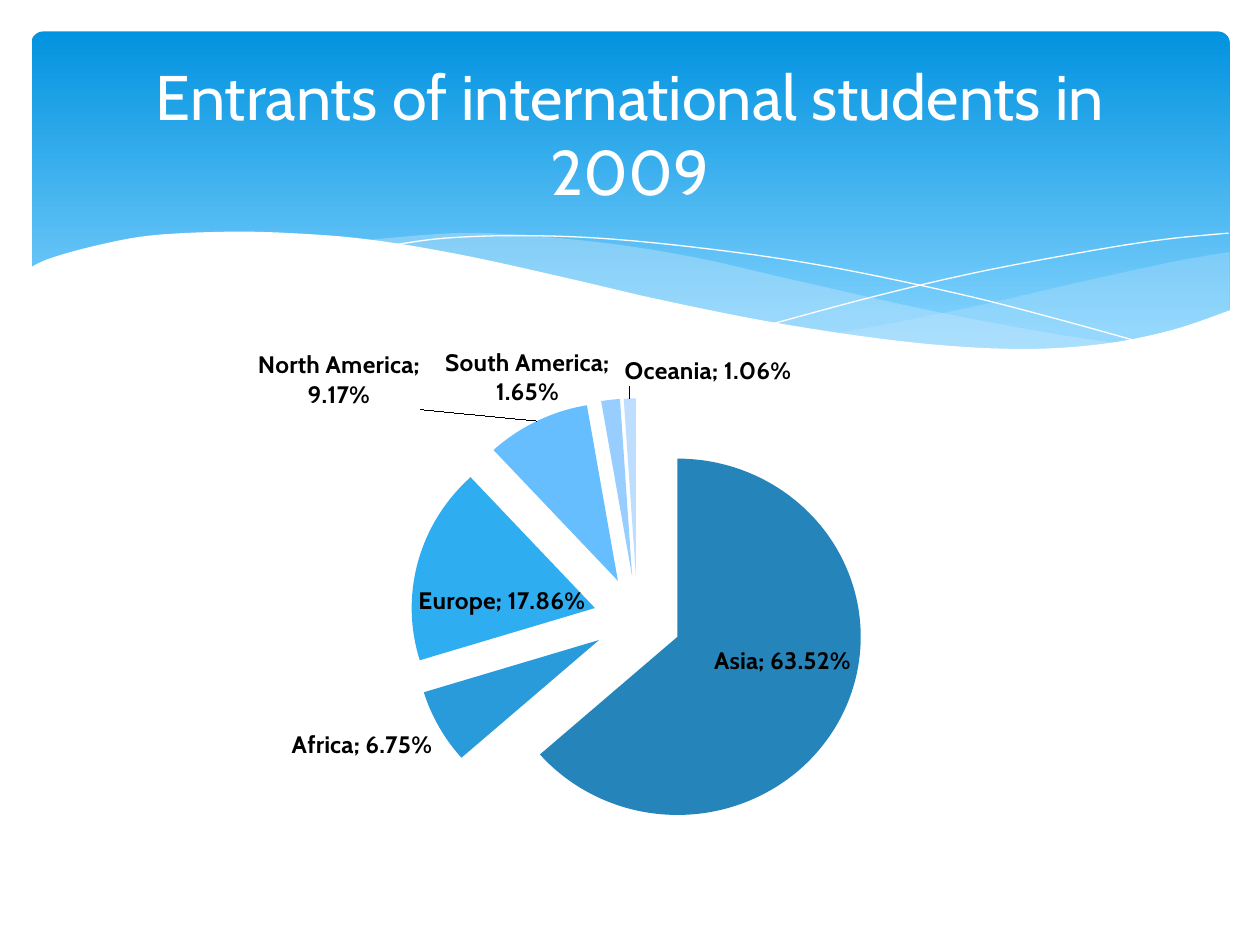
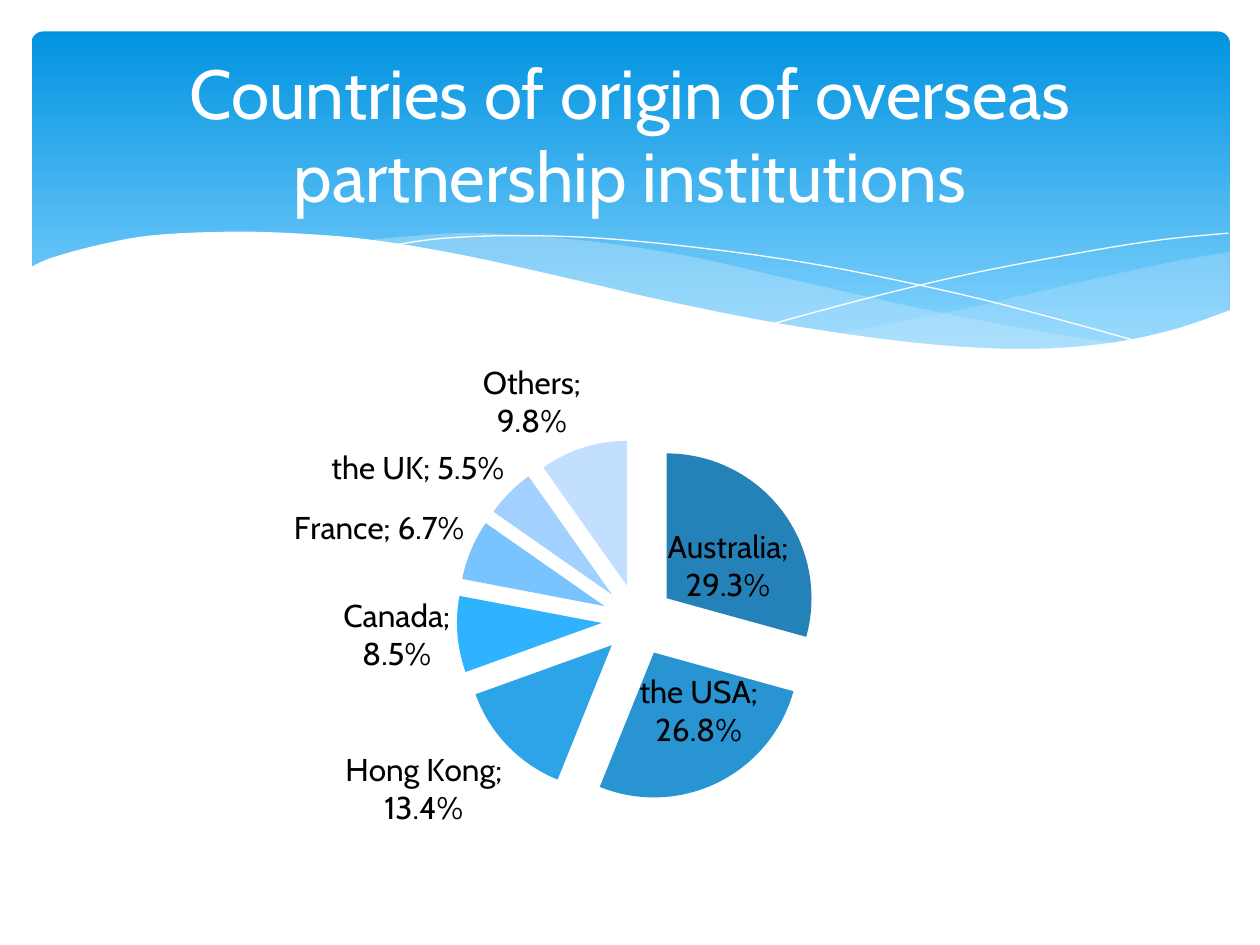
from copy import deepcopy

from pptx import Presentation
from pptx import util as u
from pptx.chart.data import CategoryChartData
from pptx.dml.color import RGBColor
from pptx.enum import chart as ch
from pptx.enum import shapes, text
from pptx.oxml import parse_xml
from pptx.oxml.ns import nsdecls, qn

FONT = "Cabin"
COLORS = {
    "band_top": "0293E0",
    "band_bottom": "83D3FE",
    "mist": "C6E7FC",
    "white": "FFFFFF",
    "black": "000000",
}
REGION_BLUES = ["2585BB", "299ADA", "2EADF1", "66BEFF", "98CEFF", "BDDEFF"]
COUNTRY_BLUES = ["2482B8", "2895D2", "2DA4E8", "30B3FF", "79C3FF", "A2D1FF", "C2DFFF"]

COLS, ROWS = 100, 75
WIDTH, HEIGHT = u.Inches(10), u.Inches(7.5)
BAND_BOX = (2.5, 2.5, 95.1, 27)
TITLE_BOX = (5, 3.7, 90, 13.7)

MIST_RIGHT_TOP = [(95.1, 17.5), (91, 18.2), (83.6, 19.8), (75.4, 21.7), (68.1, 23.2), (63.6, 24)]
MIST_RIGHT_BOTTOM = [(63.6, 24), (69.4, 24.7), (74.4, 25.2), (78.9, 25.3), (83.8, 25),
                     (88, 24.4), (91.7, 23.4), (95.1, 22.2)]
MIST_LEFT_TOP = [(86.8, 24.8), (81.2, 24), (71.6, 22.2), (60.4, 19.7), (53, 18),
                 (46.4, 16.9), (39.5, 16.2), (33.6, 16), (26.1, 16.6)]
MIST_LEFT_BOTTOM = [(26.1, 16.6), (33.7, 17.8), (42.4, 19.7), (54.1, 22.3), (62.5, 23.9),
                    (69.7, 24.9), (77.1, 25.3), (82.3, 25.2), (86.8, 24.8)]
FALLING_LINE = [(28.4, 17), (32.8, 16.4), (39.1, 16.2), (46.4, 16.5), (55.7, 17.5),
                (64, 18.8), (73.5, 20.8), (80.6, 22.6), (88.2, 24.7)]
RISING_LINE = [(58.8, 23.2), (67, 21), (75.1, 19.1), (84.1, 17.4), (89.9, 16.5), (95, 16)]
WAVE_EDGE = [(95.2, 22.1), (90.5, 23.7), (85, 24.8), (78.4, 25.2), (70.1, 24.7), (60.1, 23.3),
             (50.4, 21.4), (42.2, 19.5), (34, 17.7), (26.7, 16.5), (20.5, 16), (15.2, 15.9),
             (9.4, 16.2), (5.1, 17), (1.5, 18), (-0.2, 18.8)]
WAVE_FOOT = [(-0.2, 30.4), (95.2, 30.4)]


def rgb(value):
    return RGBColor.from_string(COLORS.get(value, value))


def col(n):
    return round(n * WIDTH / COLS)


def row(n):
    return round(n * HEIGHT / ROWS)


def place(box):
    x, y, w, h = box
    return col(x), row(y), col(w), row(h)


def smooth(knots, steps=6):
    ends = [knots[0], *knots, knots[-1]]
    pts = []
    for a, b, c, d in zip(ends, ends[1:], ends[2:], ends[3:]):
        for i in range(steps):
            t = i / steps
            pts.append(tuple(
                (2 * q + (r - p) * t + (2 * p - 5 * q + 4 * r - s) * t ** 2
                 + (3 * q - p - 3 * r + s) * t ** 3) / 2
                for p, q, r, s in zip(a, b, c, d)))
    return pts + [knots[-1]]


def add_outline(slide, box, pts, closed):
    pts = [(col(box[0] + x), row(box[1] + y)) for x, y in pts]
    fb = slide.shapes.build_freeform(*pts[0], scale=1.0)
    fb.add_line_segments(pts[1:], close=closed)
    sp = fb.convert_to_shape()
    sp.shadow.inherit = False
    return sp


def add_area(slide, box, pts, color, opacity=100):
    sp = add_outline(slide, box, pts, True)
    sp.line.fill.background()
    sp.fill.solid()
    sp.fill.fore_color.rgb = rgb(color)
    if opacity < 100:
        clr = sp.element.spPr.find(qn("a:solidFill"))[0]
        clr.append(parse_xml(f'<a:alpha {nsdecls("a")} val="{opacity * 1000}"/>'))


def add_band(slide, box):
    sp = slide.shapes.add_shape(shapes.MSO_SHAPE.ROUNDED_RECTANGLE, *place(box))
    sp.adjustments[0] = 0.034
    sp.shadow.inherit = False
    sp.line.fill.background()
    sp.fill.gradient()
    sp.fill.gradient_angle = 270
    for stop, position, color in zip(sp.fill.gradient_stops, (0, 0.9), ("band_top", "band_bottom")):
        stop.position = position
        stop.color.rgb = rgb(color)

    add_area(slide, box, smooth(MIST_RIGHT_TOP) + smooth(MIST_RIGHT_BOTTOM), "mist", 29)
    add_area(slide, box, smooth(MIST_LEFT_TOP) + smooth(MIST_LEFT_BOTTOM), "mist", 40)
    for knots in (FALLING_LINE, RISING_LINE):
        sp = add_outline(slide, box, smooth(knots), False)
        sp.fill.background()
        sp.line.color.rgb = rgb("white")
        sp.line.width = u.Pt(0)
    add_area(slide, box, smooth(WAVE_EDGE) + WAVE_FOOT, "white")


def add_title(slide, box, title, size):
    tf = slide.shapes.add_textbox(*place(box)).text_frame
    tf.word_wrap = True
    tf.vertical_anchor = text.MSO_ANCHOR.MIDDLE
    tf.text = title
    p = tf.paragraphs[0]
    p.alignment = text.PP_ALIGN.CENTER
    f = p.runs[0].font
    f.name, f.size = FONT, u.Pt(size)
    f.color.rgb = rgb("white")


def manual_layout(**values):
    items = "".join(f'<c:{k} val="{v}"/>' for k, v in values.items())
    return parse_xml(f'<c:layout {nsdecls("c")}><c:manualLayout>{items}</c:manualLayout></c:layout>')


def move_label(labels, idx, dx, dy):
    label = parse_xml(f'<c:dLbl {nsdecls("c")}><c:idx val="{idx}"/></c:dLbl>')
    label.append(manual_layout(x=dx, y=dy))
    for part in labels:
        if part.tag not in (qn("c:dLbl"), qn("c:showLeaderLines")):
            label.append(deepcopy(part))
    return label


def add_pie(slide, box, shares, blues, number_format, size, bold, explosion, plot_box=None, moves=()):
    data = CategoryChartData(number_format=number_format)
    data.categories = list(shares)
    data.add_series("Series 1", list(shares.values()))
    chart = slide.shapes.add_chart(ch.XL_CHART_TYPE.PIE, *place(box), data).chart
    chart.has_title = False
    chart.has_legend = False
    chart.font.name, chart.font.size = FONT, u.Pt(size)
    chart.font.color.rgb = rgb("black")

    plot = chart.plots[0]
    plot.vary_by_categories = True
    series = plot.series[0]
    ser = chart.element.xpath(".//c:ser")[0]
    ser.get_or_add_spPr().addnext(parse_xml(f'<c:explosion {nsdecls("c")} val="{explosion}"/>'))
    for i, color in enumerate(blues):
        fill = series.points[i].format.fill
        fill.solid()
        fill.fore_color.rgb = rgb(color)

    dl = series.data_labels
    dl.show_value = dl.show_category_name = True
    dl.number_format, dl.number_format_is_linked = number_format, False
    dl.position = ch.XL_LABEL_POSITION.BEST_FIT
    dl.font.name, dl.font.size, dl.font.bold = FONT, u.Pt(size), bold
    dl.font.color.rgb = rgb("black")
    labels = ser.find(qn("c:dLbls"))
    labels.find(qn("c:showBubbleSize")).addnext(
        parse_xml(f'<c:separator {nsdecls("c")}>; </c:separator>'))
    moved = [move_label(labels, *move) for move in moves]
    for i, label in enumerate(moved):
        labels.insert(i, label)

    if plot_box:
        area = chart.element.xpath(".//c:plotArea")[0]
        for old in area.findall(qn("c:layout")):
            area.remove(old)
        x, y, w, h = plot_box
        area.insert(0, manual_layout(layoutTarget="inner", xMode="edge", yMode="edge",
                                     x=x, y=y, w=w, h=h))


def add_pie_slide(prs, title, title_size, **pie):
    slide = prs.slides.add_slide(prs.slide_layouts[6])
    add_band(slide, BAND_BOX)
    add_title(slide, TITLE_BOX, title, title_size)
    add_pie(slide, **pie)


def main():
    prs = Presentation()
    prs.slide_width, prs.slide_height = WIDTH, HEIGHT
    add_pie_slide(
        prs, "Entrants of international students in 2009", 36,
        box=(13, 26.5, 69.3, 40.9),
        shares={"Asia": 0.6352, "Africa": 0.0675, "Europe": 0.1786,
                "North America": 0.0917, "South America": 0.0165, "Oceania": 0.0106},
        blues=REGION_BLUES, number_format="0.00%", size=14, bold=True, explosion=24,
        plot_box=(0.085, 0.1, 0.915, 0.882),
        moves=[(3, -0.13, -0.01), (5, 0.09, -0.01)])
    add_pie_slide(
        prs, "Countries of origin of overseas partnership institutions", 39.6,
        box=(12.2, 27.3, 71.7, 43.3),
        shares={"Australia": 0.293, "the USA": 0.268, "Hong Kong": 0.134, "Canada": 0.085,
                "France": 0.067, "the UK": 0.055, "Others": 0.098},
        blues=COUNTRY_BLUES, number_format="0.0%", size=18, bold=False, explosion=25)
    prs.save("out.pptx")


if __name__ == "__main__":
    main()
